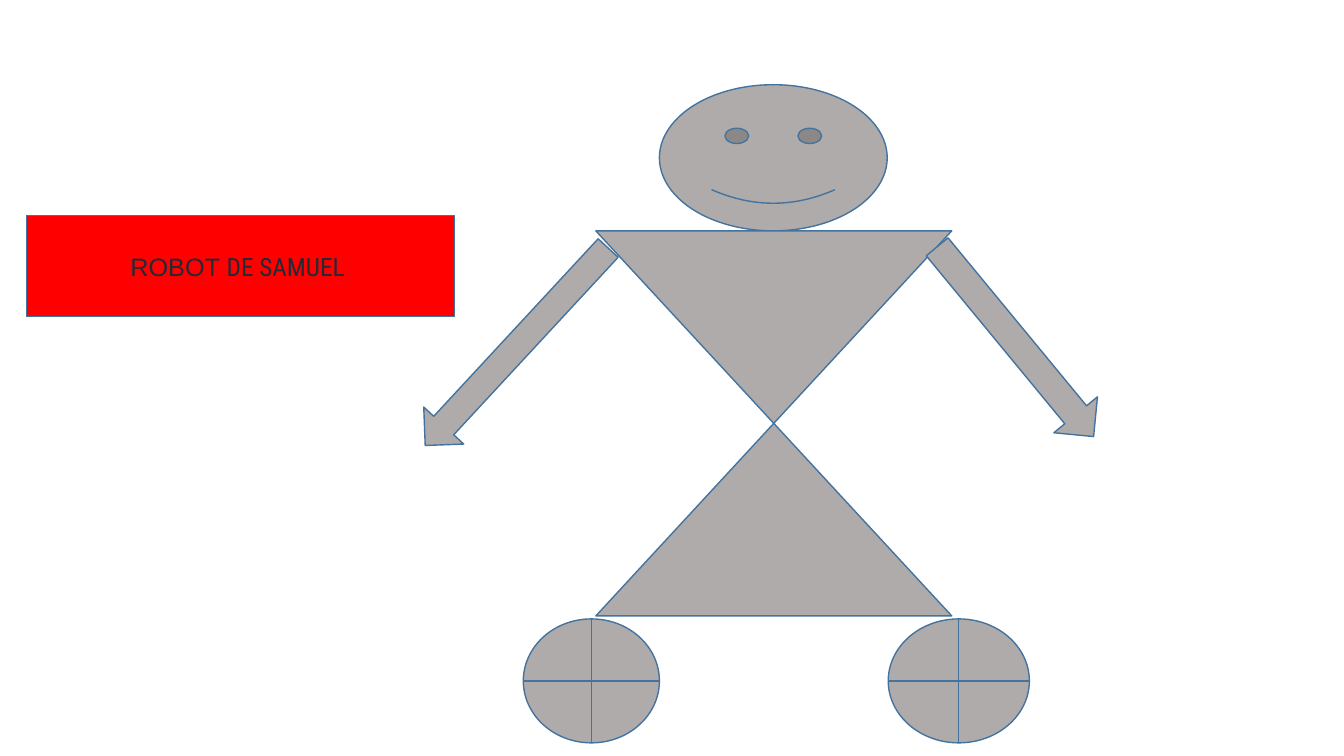
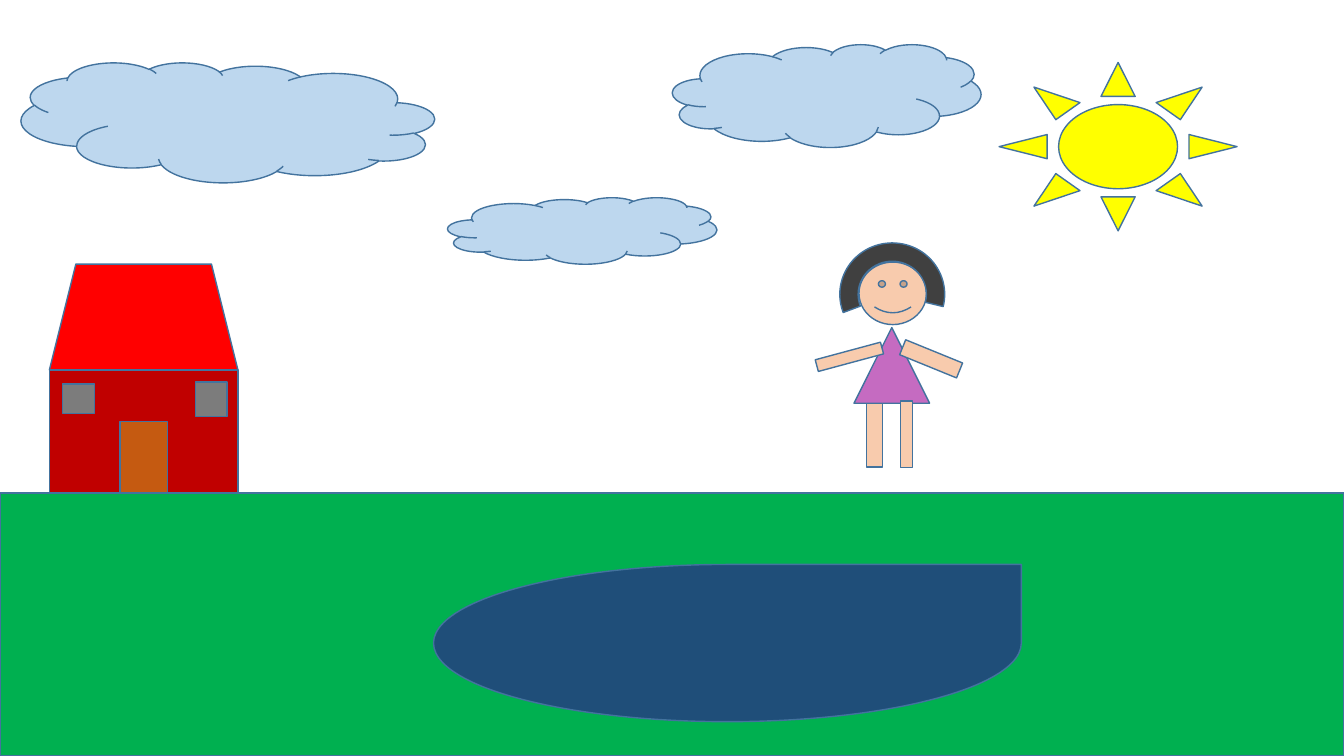
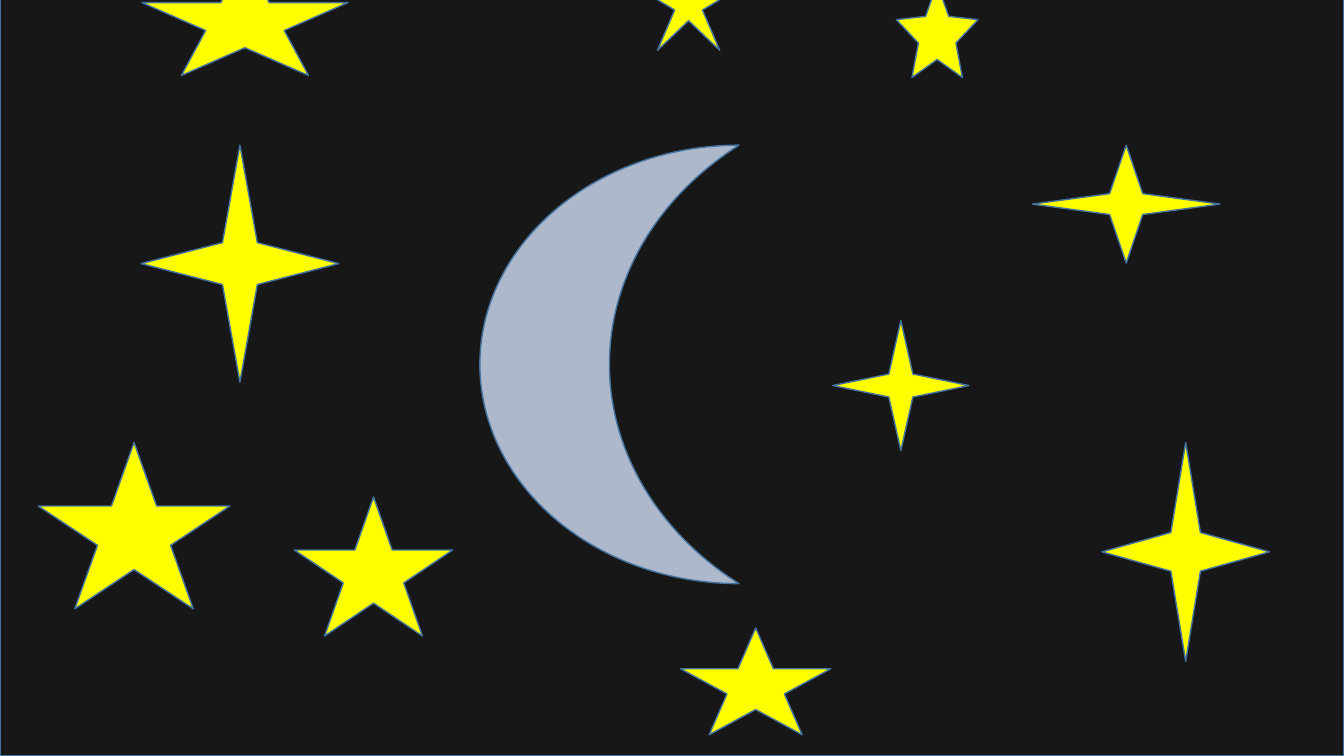
import dataclasses
import typing

import pptx
import pptx.dml.color
import pptx.enum.shapes
import pptx.enum.text
import pptx.util

KIND = pptx.enum.shapes.MSO_SHAPE
SLIDE_WIDTH, SLIDE_HEIGHT = 13.33, 7.5

OUTLINE = "43739E"
ROBOT_GREY = "AFABAB"
RED = "FF0000"
YELLOW = "FFFF00"
CLOUD_BLUE = "BDD7EE"
WINDOW_GREY = "7C7C7C"
SKIN = "F8CBAD"
TEXT_COLOUR = "222A35"

FRAME_FORMAT = {
    "word_wrap": True,
    "vertical_anchor": pptx.enum.text.MSO_ANCHOR.MIDDLE,
}


@dataclasses.dataclass(frozen=True)
class Figure:
    """One outlined shape; lengths in inches, rotation in degrees."""
    kind: KIND
    left: float
    top: float
    width: float
    height: float
    fill: str
    rotation: float = 0
    flipped: bool = False
    adjustments: tuple[float, ...] = ()


class Run(typing.NamedTuple):
    text: str
    font: str


def colour(hex_code: str) -> pptx.dml.color.RGBColor:
    return pptx.dml.color.RGBColor.from_string(hex_code)


def draw(slide, fig: Figure):
    s = slide.shapes.add_shape(
        fig.kind,
        *map(pptx.util.Inches, (fig.left, fig.top, fig.width, fig.height)))
    s.shadow.inherit = False
    s.fill.solid()
    s.fill.fore_color.rgb = colour(fig.fill)
    s.line.color.rgb = colour(OUTLINE)
    s.line.width = pptx.util.Pt(1)
    s.rotation = fig.rotation
    for i, value in enumerate(fig.adjustments):
        s.adjustments[i] = value
    if fig.flipped:
        s.element.spPr.get_or_add_xfrm().set("flipH", "1")
    return s


def write(shape, runs: list[Run]) -> None:
    tf = shape.text_frame
    for name, value in FRAME_FORMAT.items():
        setattr(tf, name, value)
    p = tf.paragraphs[0]
    p.alignment = pptx.enum.text.PP_ALIGN.CENTER
    for run in runs:
        r = p.add_run()
        r.text = run.text
        for name, value in {"name": run.font, "size": pptx.util.Pt(18)}.items():
            setattr(r.font, name, value)
        r.font.color.rgb = colour(TEXT_COLOUR)


ROBOT = [
    Figure(KIND.SMILEY_FACE, 6.54, 0.84, 2.26, 1.45, ROBOT_GREY),
    Figure(KIND.FLOWCHART_COLLATE, 5.91, 2.29, 3.53, 3.82, ROBOT_GREY),
    Figure(KIND.RIGHT_ARROW, 8.85, 3.11, 2.44, 0.56, ROBOT_GREY, rotation=50.5),
    Figure(KIND.LEFT_ARROW, 3.79, 3.17, 2.67, 0.54, ROBOT_GREY, rotation=312.8),
    *(Figure(KIND.FLOWCHART_OR, left, 6.14, width, 1.23, ROBOT_GREY)
      for left, width in ((8.81, 1.4), (5.19, 1.35))),
]
ROBOT_LABEL = Figure(KIND.RECTANGLE, 0.26, 2.14, 4.25, 1, RED)
ROBOT_NAME = [Run("ROBOT ", "Arial"), Run("DE SAMUEL ", "Roboto Condensed")]

LANDSCAPE = [
    Figure(KIND.FLOWCHART_PROCESS, 0, 4.89, SLIDE_WIDTH, 2.61, "00B050"),
    Figure(KIND.SUN, 9.91, 0.62, 2.36, 1.67, YELLOW),
    Figure(KIND.CLOUD, 0.21, 0.62, 4.1, 1.19, CLOUD_BLUE, flipped=True),
    Figure(KIND.CLOUD, 4.44, 1.96, 2.67, 0.66, CLOUD_BLUE),
    Figure(KIND.CLOUD, 6.67, 0.44, 3.06, 1.02, CLOUD_BLUE),
]
HOUSE = [
    Figure(KIND.RECTANGLE, 0.49, 3.67, 1.87, 1.22, "C00000"),
    Figure(KIND.TRAPEZOID, 0.49, 2.62, 1.87, 1.05, RED),
    Figure(KIND.FLOWCHART_PROCESS, 1.07, 4.3, 0.71, 0.47, "C55A11", rotation=90),
    Figure(KIND.FLOWCHART_PROCESS, 1.94, 3.79, 0.31, 0.34, WINDOW_GREY),
    Figure(KIND.FLOWCHART_PROCESS, 0.62, 3.81, 0.32, 0.29, WINDOW_GREY),
]
POND = Figure(KIND.TEAR, 4.3, 5.6, 5.83, 1.56, "1F4E79")
LIMBS = [
    Figure(KIND.FLOWCHART_PROCESS, *box, SKIN, rotation=rotation)
    for box, rotation in (
        ((8.36, 4.24, 0.63, 0.16), 90),
        ((8.93, 3.98, 0.12, 0.66), 0),
        ((8.09, 3.48, 0.67, 0.12), 344.9),
        ((8.93, 3.48, 0.61, 0.16), 22.2),
    )
]
GIRL = [
    Figure(KIND.FLOWCHART_EXTRACT, 8.47, 3.25, 0.75, 0.75, "C56BC1"),
    Figure(KIND.SMILEY_FACE, 8.52, 2.6, 0.67, 0.62, SKIN),
    *LIMBS,
    Figure(KIND.BLOCK_ARC, 8.33, 2.41, 1.04, 1.02, "404040",
           adjustments=(95.782, 8.123, 0.178)),
]

FOUR_POINT_BOXES = [
    (8.26, 3.18, 1.35, 1.29),
    (1.4, 1.44, 1.96, 2.35),
    (10.24, 1.44, 1.86, 1.17),
    (10.93, 4.39, 1.66, 2.17),
]
FIVE_POINT_BOXES = [
    (6.75, 6.23, 1.49, 1.06),
    (1.41, -0.42, 2.04, 1.17),
    (0.38, 4.39, 1.9, 1.65),
    (2.92, 4.93, 1.57, 1.38),
]
NIGHT = [
    Figure(KIND.RECTANGLE, 0, -1.14, SLIDE_WIDTH, 8.64, "181717"),
    Figure(KIND.MOON, 4.76, 1.44, 2.57, 4.35, "ADB9CA"),
    *(Figure(KIND.STAR_4_POINT, *box, YELLOW) for box in FOUR_POINT_BOXES),
    *(Figure(KIND.STAR_5_POINT, *box, YELLOW) for box in FIVE_POINT_BOXES),
    Figure(KIND.STAR_5_POINT, 8.89, -0.16, 0.81, 0.93, YELLOW, adjustments=(0.23,)),
    Figure(KIND.STAR_5_POINT, 6.33, -0.5, 1, 1, YELLOW, adjustments=(0.138,)),
]


def add_scene(prs, figures: list[Figure]):
    """Add a blank slide with the figures drawn from back to front."""
    slide = prs.slides.add_slide(prs.slide_layouts[6])
    for fig in figures:
        draw(slide, fig)
    return slide


def main() -> None:
    prs = pptx.Presentation()
    prs.slide_width = pptx.util.Inches(SLIDE_WIDTH)
    prs.slide_height = pptx.util.Inches(SLIDE_HEIGHT)
    robot_slide = add_scene(prs, ROBOT)
    write(draw(robot_slide, ROBOT_LABEL), ROBOT_NAME)
    add_scene(prs, [*LANDSCAPE, *HOUSE, POND, *GIRL])
    add_scene(prs, NIGHT)
    prs.save("out.pptx")


if __name__ == "__main__":
    main()
